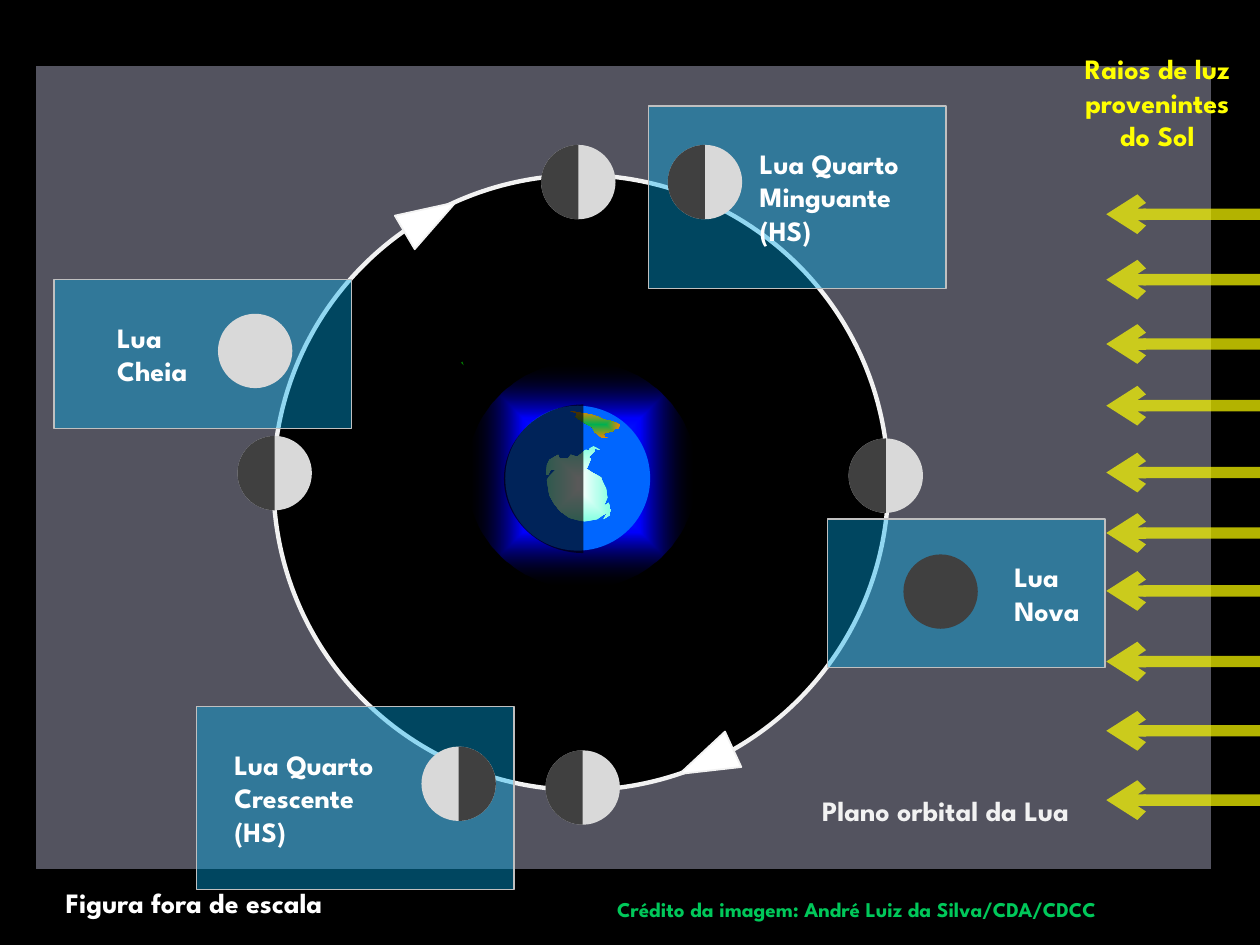
from math import cos, pi, sin
from pptx import Presentation
from pptx.dml.color import RGBColor
from pptx.enum.shapes import MSO_CONNECTOR, MSO_SHAPE
from pptx.enum.text import MSO_ANCHOR, PP_ALIGN
from pptx.oxml import parse_xml
from pptx.oxml.ns import qn, nsdecls
from pptx.util import Inches, Pt

FONT = "League Spartan"
C = {"space": "000000", "plane": "D6D6F5", "orbit": "F2F2F2", "white": "FFFFFF",
     "sun": "FFFF00", "lit": "D9D9D9", "dark": "404040", "panel": "00B0F0",
     "edge": "C0C0C0", "credit": "00C85A", "sea": "0066FF", "glow": "0000FF",
     "forest": "00B050", "desert": "EE8800", "ice": "85FFE0", "speck": "008000"}

MOON = 0.59
ORBIT_MOONS = [(1.885, 3.46), (4.33, 5.955), (6.735, 3.48), (4.295, 1.15)]
RAY_ROWS = [1.7, 2.22, 2.73, 3.22, 3.75, 4.23, 4.69, 5.25, 5.8, 6.35]
RAY_START, RAY_END = 10.08, 8.78

# box, text indent, paragraphs, moon corner, lit part
PHASES = [
    ((5.15, 0.84, 2.36, 1.45), 0.78, ["Lua Quarto", "Minguante (HS)"], (5.3, 1.15), "right"),
    ((0.43, 2.22, 2.36, 1.18), 0.4, ["Lua", "Cheia"], (1.73, 2.49), "all"),
    ((1.56, 5.61, 2.52, 1.45), 0.2, ["Lua Quarto", "Crescente", "(HS)"], (3.345, 5.925), "left"),
    ((6.57, 4.12, 2.2, 1.18), 1.38, ["Lua", "Nova"], (7.17, 4.4), "none"),
]
# box, size, colour, alignment, paragraphs
SUN_CAPTION = ((8.41, 0.36, 1.55, 0.91), 16, "sun", PP_ALIGN.CENTER,
               ["Raios de luz", "provenintes", "do Sol"])
PLANE_CAPTION = ((6.32, 6.25, 2.37, 0.37), 16, "orbit", PP_ALIGN.CENTER, ["Plano orbital da Lua"])
SCALE_CAPTION = ((0.28, 6.98, 2.52, 0.37), 16, "white", PP_ALIGN.CENTER, ["Figura fora de escala"])
CREDIT = ((4.8, 7.07, 5.28, 0.3), 12, "credit", PP_ALIGN.LEFT,
          ["Crédito da imagem: André Luiz da Silva/CDA/CDCC"])
DIRECTIONS = [((5.45, 5.81, 0.31, 0.47), 245.3), ((3.26, 1.49, 0.31, 0.47), 59.4)]

SOUTH_AMERICA = [
    (4.52, 3.26), (4.58, 3.28), (4.57, 3.31), (4.63, 3.35), (4.7, 3.39), (4.72, 3.43),
    (4.77, 3.47), (4.84, 3.48), (4.8, 3.47), (4.79, 3.44), (4.83, 3.43), (4.87, 3.42),
    (4.85, 3.41), (4.91, 3.4), (4.92, 3.37), (4.9, 3.36), (4.84, 3.34), (4.79, 3.33),
    (4.75, 3.31), (4.69, 3.29), (4.62, 3.28), (4.57, 3.27)]
ANTARCTICA = [
    (4.69, 4.13), (4.74, 4.12), (4.78, 4.09), (4.82, 4.07), (4.79, 4.12), (4.84, 4.09),
    (4.85, 4.05), (4.83, 3.99), (4.79, 4.02), (4.82, 3.95), (4.81, 3.88), (4.78, 3.82),
    (4.77, 3.79), (4.68, 3.74), (4.64, 3.71), (4.66, 3.71), (4.69, 3.64), (4.67, 3.63),
    (4.72, 3.58), (4.72, 3.56), (4.76, 3.57), (4.71, 3.54), (4.68, 3.56), (4.68, 3.58),
    (4.65, 3.57), (4.59, 3.62), (4.56, 3.62), (4.53, 3.61), (4.51, 3.64), (4.44, 3.64),
    (4.43, 3.61), (4.36, 3.65), (4.34, 3.69), (4.33, 3.77), (4.35, 3.77), (4.37, 3.73),
    (4.41, 3.73), (4.36, 3.78), (4.34, 3.81), (4.36, 3.93), (4.4, 4.0), (4.45, 4.06),
    (4.52, 4.11), (4.59, 4.13), (4.64, 4.14)]
SPECK = [(3.66, 2.88), (3.68, 2.9), (3.67, 2.87)]

prs = Presentation()
prs.slide_width, prs.slide_height = Inches(10), Inches(7.5)
slide = prs.slides.add_slide(prs.slide_layouts[6])
slide.background.fill.solid()
slide.background.fill.fore_color.rgb = RGBColor.from_string(C["space"])
shapes = slide.shapes


def set_alpha(parent, percent):
    color = parent.find(qn("a:solidFill")).find(qn("a:srgbClr"))
    color.append(parse_xml(f'<a:alpha {nsdecls("a")} val="{percent * 1000}"/>'))


def paint(sp, fill, line=None, width=1, alpha=None):
    sp.shadow.inherit = False
    sp.fill.solid()
    sp.fill.fore_color.rgb = RGBColor.from_string(C[fill])
    if alpha:
        set_alpha(sp.element.spPr, alpha)
    if line:
        sp.line.color.rgb = RGBColor.from_string(C[line])
        sp.line.width = Pt(width)
    else:
        sp.line.fill.background()
    return sp


def paint_radial(sp, stops):
    """Fill from the centre outwards with (position, colour, alpha) stops."""
    paint(sp, stops[0][1])
    marks = "".join(
        f'<a:gs pos="{pos * 1000}"><a:srgbClr val="{C[color]}">'
        f'<a:alpha val="{alpha * 1000}"/></a:srgbClr></a:gs>' for pos, color, alpha in stops)
    grad = parse_xml(
        f'<a:gradFill {nsdecls("a")} rotWithShape="1"><a:gsLst>{marks}</a:gsLst>'
        '<a:path path="shape"><a:fillToRect l="50000" t="50000" r="50000" b="50000"/>'
        '</a:path></a:gradFill>')
    spPr = sp.element.spPr
    spPr.replace(spPr.find(qn("a:solidFill")), grad)


def add_shape(kind, box):
    return shapes.add_shape(kind, *map(Inches, box))


def add_outline(points):
    pts = [(Inches(x), Inches(y)) for x, y in points]
    builder = shapes.build_freeform(*pts[0])
    builder.add_line_segments(pts[1:], close=True)
    return builder.convert_to_shape()


def add_half_disc(cx, cy, rx, ry, side, steps=40):
    """Half an ellipse; side is -1 for left and 1 for right."""
    angles = [pi * i / steps - pi / 2 for i in range(steps + 1)]
    return add_outline([(cx + side * rx * cos(a), cy + ry * sin(a)) for a in angles])


def add_moon(corner, lit="right"):
    x, y = corner
    paint(add_shape(MSO_SHAPE.OVAL, (x, y, MOON, MOON)), "dark" if lit == "none" else "lit")
    if lit in ("left", "right"):
        r = MOON / 2
        paint(add_half_disc(x + r, y + r, r, r, -1 if lit == "right" else 1), "dark")


def write(tf, lines, size, color, align):
    for i, line in enumerate(lines):
        p = tf.paragraphs[0] if i == 0 else tf.add_paragraph()
        p.text, p.alignment = line, align
        p.font.name, p.font.size, p.font.bold = FONT, Pt(size), True
        p.font.color.rgb = RGBColor.from_string(C[color])


def add_caption(box, size, color, align, lines):
    tf = shapes.add_textbox(*map(Inches, box)).text_frame
    tf.word_wrap = align == PP_ALIGN.LEFT
    write(tf, lines, size, color, align)


def add_phase(box, indent, lines, corner, lit):
    sp = paint(add_shape(MSO_SHAPE.RECTANGLE, box), "panel", "edge", 0.75, alpha=40)
    tf = sp.text_frame
    tf.word_wrap, tf.vertical_anchor = True, MSO_ANCHOR.TOP
    tf.margin_left, tf.margin_top = Inches(0.1 + indent), Inches(0.32)
    write(tf, lines, 16, "white", PP_ALIGN.LEFT)
    add_moon(corner, lit)


def add_ray(y):
    ray = shapes.add_connector(MSO_CONNECTOR.STRAIGHT, Inches(RAY_START), Inches(y),
                               Inches(RAY_END), Inches(y))
    ray.line.color.rgb = RGBColor.from_string(C["sun"])
    ray.line.width = Pt(6.5)
    ln = ray.line._get_or_add_ln()
    set_alpha(ln, 70)
    ln.append(parse_xml(f'<a:tailEnd {nsdecls("a")} type="arrow"/>'))
    ray.element.spPr.append(parse_xml(f'<a:effectLst {nsdecls("a")}/>'))


plane = paint(add_shape(MSO_SHAPE.PARALLELOGRAM, (0.28, 0.52, 9.34, 6.38)),
              "plane", "space", alpha=39)
plane.adjustments[0] = 0
add_caption(*CREDIT)
paint(add_shape(MSO_SHAPE.OVAL, (2.17, 1.39, 4.88, 4.88)), "space", "orbit", 2.5)
add_caption(*SUN_CAPTION)
for y in RAY_ROWS:
    add_ray(y)
add_caption(*PLANE_CAPTION)
for corner in ORBIT_MOONS:
    add_moon(corner)
for phase in PHASES:
    add_phase(*phase)
add_caption(*SCALE_CAPTION)
for box, angle in DIRECTIONS:
    sp = paint(add_shape(MSO_SHAPE.ISOSCELES_TRIANGLE, box), "white", "orbit")
    sp.rotation = angle

# Earth with its glow, land and night side
paint_radial(add_shape(MSO_SHAPE.OVAL, (3.7, 2.87, 1.83, 1.8)),
             [(0, "sea", 100), (50, "glow", 100), (100, "space", 0)])
paint(add_shape(MSO_SHAPE.OVAL, (4.01, 3.22, 1.15, 1.15)), "sea")
paint_radial(add_outline(SOUTH_AMERICA), [(0, "forest", 100), (100, "desert", 100)])
paint_radial(add_outline(ANTARCTICA), [(3, "white", 100), (100, "ice", 100)])
paint(add_outline(SPECK), "speck")
paint(add_half_disc(4.63, 3.8, 0.63, 0.59, -1), "space", alpha=65)

prs.save("out.pptx")
